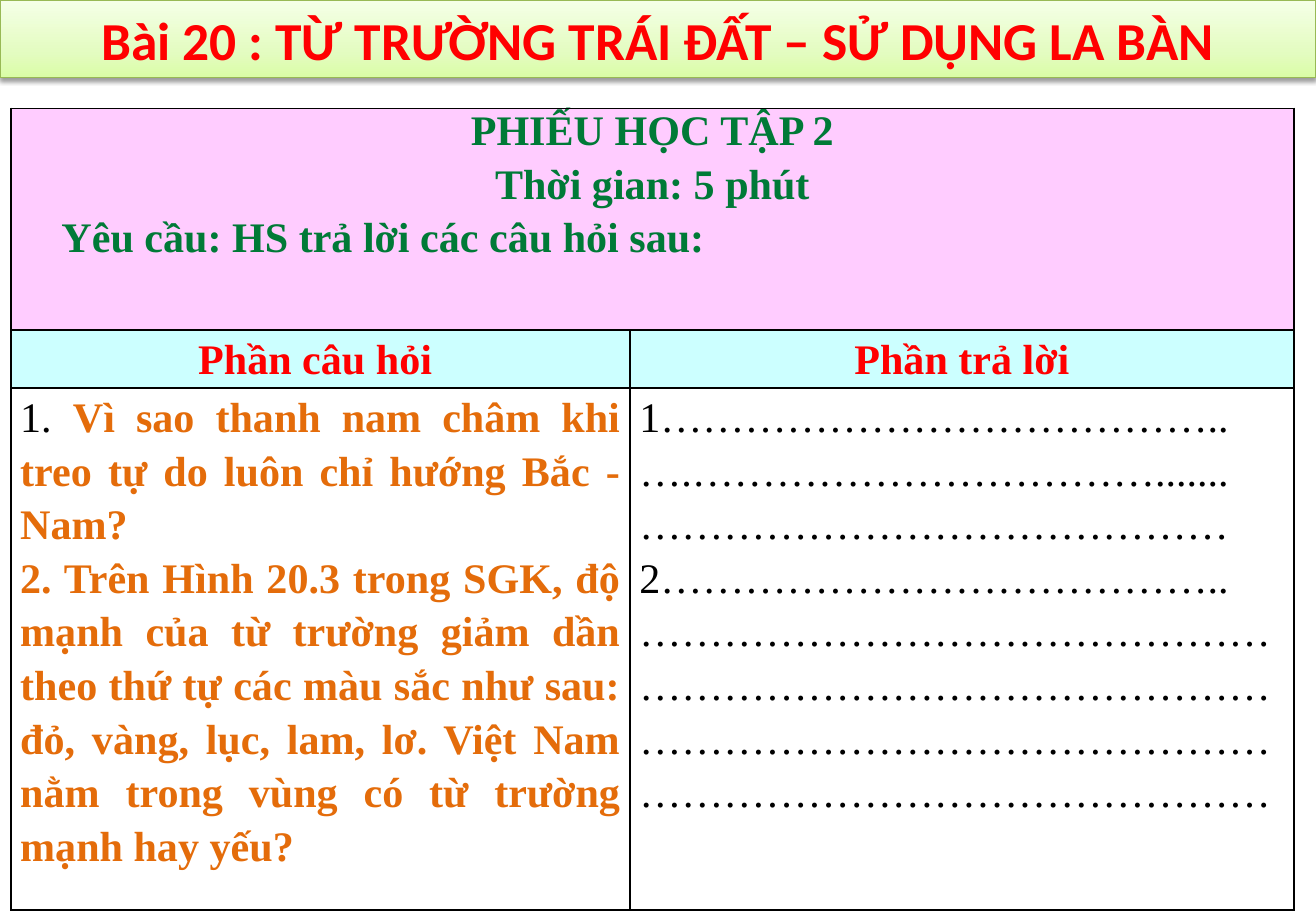
from copy import deepcopy
from dataclasses import dataclass

from lxml import etree
from pptx import Presentation
from pptx import util as u
from pptx.dml.color import RGBColor
from pptx.enum import text
from pptx.oxml.ns import qn

ALIGN = text.PP_ALIGN


@dataclass(frozen=True)
class Theme:
    red: str = "FF0000"
    green: str = "007A37"
    orange: str = "E46C0A"
    black: str = "000000"
    pink: str = "FFCCFF"
    cyan: str = "CCFFFF"
    banner_line: str = "98B955"
    banner_stops: tuple = ((0, "DAFDA7"), (0.35, "E4FCC2"), (1, "F5FFE7"))
    title_font: str = "Calibri"
    body_font: str = "Times New Roman"
    title_size: int = 33
    body_size: int = 26
    spacing: float = 1.15


def apply(obj, values):
    for name, value in values.items():
        setattr(obj, name, value)


def add_xml(parent, tag, **attrs):
    return etree.SubElement(parent, qn(tag), {k: str(v) for k, v in attrs.items()})


class Worksheet:
    def __init__(self, prs, theme):
        self.theme = theme
        self.slide = prs.slides.add_slide(prs.slide_layouts[5])

    def run(self, p, words, color, bold=True, font=None, size=None):
        r = p.add_run()
        r.text = words
        apply(r.font, {"name": font or self.theme.body_font, "bold": bold,
                       "size": u.Pt(size or self.theme.body_size)})
        r.font.color.rgb = RGBColor.from_string(color)

    def banner(self, words, width, height):
        t, sp = self.theme, self.slide.shapes.title
        apply(sp, {"left": 0, "top": 0, "width": width, "height": height})
        # Gradient running upwards
        sp.fill.gradient()
        sp.fill.gradient_angle = 90
        first = sp.fill._fill._gradFill.find(qn("a:gsLst"))[0]
        first.addnext(deepcopy(first))
        for stop, (position, color) in zip(sp.fill.gradient_stops, t.banner_stops):
            stop.position = position
            stop.color.rgb = RGBColor.from_string(color)
        sp.line.color.rgb = RGBColor.from_string(t.banner_line)
        sp.line.width = u.Pt(0.75)
        # Soft shadow below
        effects = add_xml(sp._element.spPr, "a:effectLst")
        shadow = add_xml(effects, "a:outerShdw", blurRad=u.Pt(3.1), dist=u.Pt(1.6),
                         dir=5400000, rotWithShape=0)
        add_xml(add_xml(shadow, "a:srgbClr", val=t.black), "a:alpha", val=38000)
        tf = sp.text_frame
        apply(tf, {"word_wrap": True, "auto_size": text.MSO_AUTO_SIZE.NONE,
                   "vertical_anchor": text.MSO_ANCHOR.MIDDLE})
        p = tf.paragraphs[0]
        p.alignment = ALIGN.CENTER
        self.run(p, words, t.red, font=t.title_font, size=t.title_size)

    def table(self, left, top, widths, heights):
        tbl = self.slide.shapes.add_table(len(heights), len(widths), left, top,
                                          sum(widths), sum(heights)).table
        apply(tbl, {"first_row": False, "horz_banding": False})
        for column, width in zip(tbl.columns, widths):
            column.width = width
        for row, height in zip(tbl.rows, heights):
            row.height = height
        for cell in tbl.iter_cells():
            self.borders(cell)
        return tbl

    def borders(self, cell):
        tcPr = cell._tc.get_or_add_tcPr()
        for side in ("a:lnL", "a:lnR", "a:lnT", "a:lnB"):
            fill = add_xml(add_xml(tcPr, side, w=u.Pt(1)), "a:solidFill")
            add_xml(fill, "a:srgbClr", val=self.theme.black)

    def cell(self, cell, paragraphs, fill=None):
        """Each paragraph is (alignment, line spacing, left indent, runs)."""
        apply(cell, {"margin_left": u.Cm(0.2), "margin_right": u.Cm(0.2),
                     "margin_top": 0, "margin_bottom": 0})
        if fill:
            cell.fill.solid()
            cell.fill.fore_color.rgb = RGBColor.from_string(fill)
        else:
            cell.fill.background()
        tf = cell.text_frame
        for i, (alignment, spacing, indent, runs) in enumerate(paragraphs):
            p = tf.add_paragraph() if i else tf.paragraphs[0]
            apply(p, {"alignment": alignment, "line_spacing": spacing})
            if indent:
                p._p.get_or_add_pPr().set("marL", str(indent))
            for values in runs:
                self.run(p, *values)


def main():
    theme = Theme()
    prs = Presentation()
    prs.slide_width = u.Inches(11.29)
    prs.slide_height = u.Inches(7.87)
    sheet = Worksheet(prs, theme)
    ls = theme.spacing

    # Lesson title
    sheet.banner("Bài 20 : TỪ TRƯỜNG TRÁI ĐẤT – SỬ DỤNG LA BÀN",
                 prs.slide_width, u.Cm(1.69))

    # Worksheet grid
    tbl = sheet.table(u.Cm(0.24), u.Cm(2.36), [u.Cm(13.49), u.Cm(14.47)],
                      [u.Cm(4.83), u.Cm(1.27), u.Cm(11.38)])

    # Heading across both columns
    tbl.cell(0, 0).merge(tbl.cell(0, 1))
    sheet.cell(tbl.cell(0, 0), [
        (ALIGN.CENTER, 1.0, 0, [("PHIẾU HỌC TẬP 2", theme.green)]),
        (ALIGN.CENTER, ls, 0, [("Thời gian: 5 phút", theme.green)]),
        (ALIGN.LEFT, ls, u.Cm(0.9),
         [("Yêu cầu: HS trả lời các câu hỏi sau:", theme.green)]),
    ], theme.pink)

    # Column headings
    for i, heading in enumerate(("Phần câu hỏi ", "Phần trả lời")):
        sheet.cell(tbl.cell(1, i),
                   [(ALIGN.CENTER, ls, 0, [(heading, theme.red)])], theme.cyan)

    # Questions
    questions = [
        [("1. ", theme.black, False),
         ("Vì sao thanh nam châm khi treo tự do luôn chỉ hướng Bắc - Nam?",
          theme.orange)],
        [("2. Trên Hình 20.3 trong SGK, độ mạnh của từ trường giảm dần theo thứ tự "
          "các màu sắc như sau: đỏ, vàng, lục, lam, lơ. Việt Nam nằm trong vùng có "
          "từ trường mạnh hay yếu?", theme.orange)],
    ]
    sheet.cell(tbl.cell(2, 0), [(ALIGN.JUSTIFY, ls, 0, runs) for runs in questions])

    # Dotted answer lines
    short_line, long_line = "…" * 13 + "..", "…" * 30
    answers = ["1" + short_line, "…." + "…" * 11 + ".......", "…" * 14,
               "2" + short_line, long_line, long_line]
    sheet.cell(tbl.cell(2, 1), [(ALIGN.JUSTIFY, ls, 0, [(line, theme.black, False)])
                                for line in answers])

    prs.save("out.pptx")


if __name__ == "__main__":
    main()
